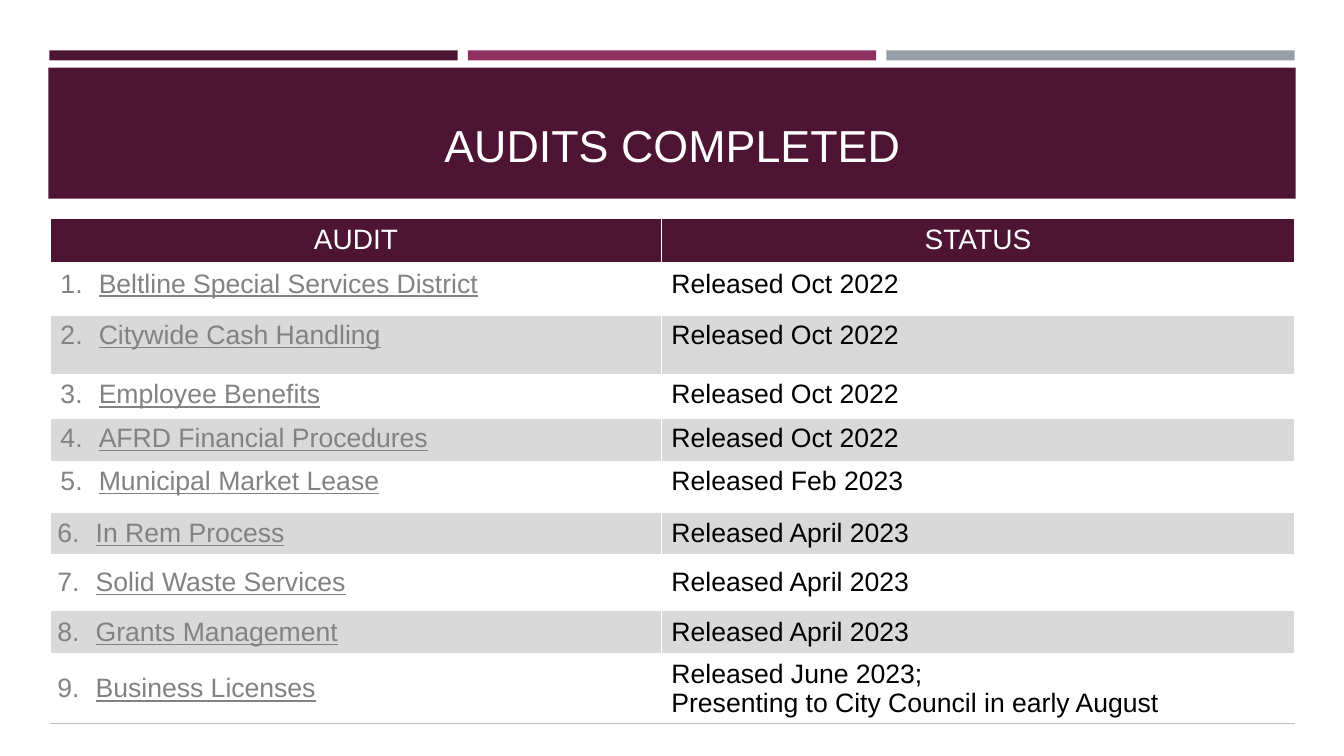
from pptx import Presentation
from pptx.dml.color import RGBColor
from pptx.enum.shapes import MSO_SHAPE
from pptx.enum.text import MSO_ANCHOR, MSO_AUTO_SIZE, PP_ALIGN
from pptx.oxml.ns import qn
from pptx.util import Inches, Pt
from lxml import etree

RECT = MSO_SHAPE.RECTANGLE
TOP, MIDDLE, BOTTOM = MSO_ANCHOR.TOP, MSO_ANCHOR.MIDDLE, MSO_ANCHOR.BOTTOM
LEFT, CENTER = PP_ALIGN.LEFT, PP_ALIGN.CENTER
FIXED = MSO_AUTO_SIZE.NONE

PLUM = RGBColor(0x4D, 0x14, 0x34)
BERRY = RGBColor(0x90, 0x31, 0x63)
STEEL = RGBColor(0x96, 0x9F, 0xA7)
WHITE = RGBColor(0xFF, 0xFF, 0xFF)
BLACK = RGBColor(0, 0, 0)
LINK = RGBColor(0x82, 0x82, 0x82)
STRIPE = RGBColor(0xD9, 0xD9, 0xD9)
RULE = RGBColor(0xBF, 0xBF, 0xBF)

COLS = [6.06, 6.28]
ROWS = [0.45, 0.51, 0.59, 0.43, 0.43, 0.5, 0.42, 0.56, 0.43, 0.67]
AUDITS = [
    ("Beltline Special Services District", "Released Oct 2022"),
    ("Citywide Cash Handling", "Released Oct 2022"),
    ("Employee Benefits", "Released Oct 2022"),
    ("AFRD Financial Procedures", "Released Oct 2022"),
    ("Municipal Market Lease", "Released Feb 2023"),
    ("In Rem Process", "Released April 2023"),
    ("Solid Waste Services", "Released April 2023"),
    ("Grants Management", "Released April 2023"),
    ("Business Licenses",
     "Released June 2023;\nPresenting to City Council in early August"),
]


def write(frame, text, size=19, color=BLACK, align=LEFT, under=False,
          before=0, number=None):
    """Fill a text frame, one paragraph for each line of text."""
    for i, line in enumerate(text.split("\n")):
        para = frame.paragraphs[0] if i == 0 else frame.add_paragraph()
        para.alignment = align
        para.space_before = Pt(before)
        run = para.add_run()
        run.text = line
        font = run.font
        font.name, font.size, font.underline = "Arial", Pt(size), under
        font.color.rgb = color
        if number:
            props = para._p.get_or_add_pPr()
            props.set("marL", str(Inches(0.38)))
            props.set("indent", str(-Inches(0.38)))
            etree.SubElement(props, qn("a:buFont"), typeface="+mj-lt")
            etree.SubElement(props, qn("a:buAutoNum"),
                             type="arabicPeriod", startAt=str(number))


def bar(slide, left, top, width, height, color):
    shape = slide.shapes.add_shape(RECT, Inches(left), Inches(top),
                                   Inches(width), Inches(height))
    shape.shadow.inherit = False
    shape.fill.solid()
    shape.fill.fore_color.rgb = color
    shape.line.fill.background()


def border(cell, low=WHITE, thick=1):
    """Draw four sides; the bottom one takes its own color and width."""
    props = cell._tc.get_or_add_tcPr()
    sides = [("lnL", WHITE, 1), ("lnR", WHITE, 1),
             ("lnT", WHITE, 1), ("lnB", low, thick)]
    for i, (side, color, width) in enumerate(sides):
        line = etree.Element(qn("a:" + side), w=str(Pt(width)))
        fill = etree.SubElement(line, qn("a:solidFill"))
        etree.SubElement(fill, qn("a:srgbClr"), val=str(color))
        props.insert(i, line)


def header(slide, left, top, width):
    # Three strips across the top
    gap, strip = 0.1, 4.05
    for i, color in enumerate([PLUM, BERRY, STEEL]):
        bar(slide, left + 0.01 + i * (strip + gap), top, strip, 0.1, color)

    # Title band
    bar(slide, left, top + 0.17, width, 1.3, PLUM)
    title = slide.shapes.title
    title.left, title.top = Inches(left + 0.19), Inches(top + 0.33)
    title.width, title.height = Inches(12), Inches(0.92)
    frame = title.text_frame
    frame.auto_size = FIXED
    frame.word_wrap = True
    frame.vertical_anchor = BOTTOM
    write(frame, "AUDITS COMPLETED", size=32, color=WHITE, align=CENTER)
    title.element.getparent().append(title.element)


def audits(slide, left, top):
    table = slide.shapes.add_table(
        len(ROWS), len(COLS), Inches(left), Inches(top),
        Inches(sum(COLS)), Inches(sum(ROWS))).table
    for col, width in zip(table.columns, COLS):
        col.width = Inches(width)
    for row, height in zip(table.rows, ROWS):
        row.height = Inches(height)

    # Heading row
    for cell, text in zip(table.rows[0].cells, ["AUDIT", "STATUS"]):
        cell.fill.solid()
        cell.fill.fore_color.rgb = PLUM
        border(cell, thick=3)
        write(cell.text_frame, text, size=20, color=WHITE,
              align=CENTER, before=6)

    # Numbered audits
    for n, (name, status) in enumerate(AUDITS, 1):
        audit, state = table.rows[n].cells
        for cell in (audit, state):
            cell.fill.solid()
            cell.fill.fore_color.rgb = WHITE if n % 2 else STRIPE
            cell.vertical_anchor = MIDDLE if n > 5 else TOP
            border(cell, low=RULE if n == len(AUDITS) else WHITE)
        if n > 5:
            audit.margin_left = audit.margin_right = Inches(0.07)
            audit.margin_top = audit.margin_bottom = 0
        write(audit.text_frame, name, color=LINK, under=True, number=n)
        write(state.text_frame, status)


def main():
    deck = Presentation()
    deck.slide_width, deck.slide_height = Inches(13.33), Inches(7.5)
    slide = deck.slides.add_slide(deck.slide_layouts[5])
    header(slide, 0.48, 0.5, 12.37)
    audits(slide, 0.5, 2.17)
    deck.save("out.pptx")


if __name__ == "__main__":
    main()
